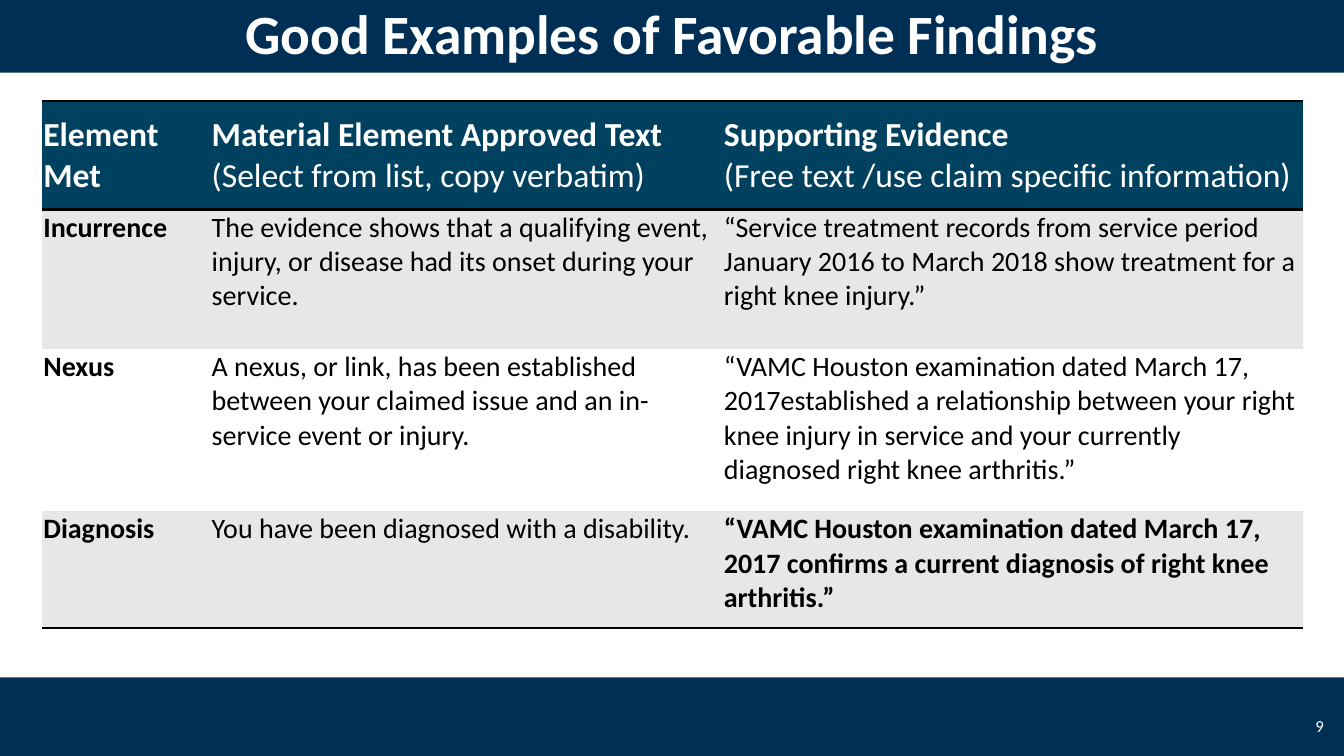
from dataclasses import dataclass

from lxml import etree
from pptx import Presentation
from pptx.dml.color import RGBColor
from pptx.enum.shapes import MSO_SHAPE
from pptx.enum.text import MSO_ANCHOR, PP_ALIGN
from pptx.oxml.ns import qn
from pptx.util import Inches, Pt

RECTANGLE = MSO_SHAPE.RECTANGLE
MIDDLE, TOP = MSO_ANCHOR.MIDDLE, MSO_ANCHOR.TOP
LEFT, CENTER, RIGHT = PP_ALIGN.LEFT, PP_ALIGN.CENTER, PP_ALIGN.RIGHT
NO_TABLE_STYLE = "{2D5ABB26-0587-4C30-8999-92F81FD0307C}"


@dataclass(frozen=True)
class Theme:
    font: str = "Calibri"
    band: str = "002F56"
    header: str = "00415F"
    stripe: str = "E7E7E7"
    light: str = "FFFFFF"
    dark: str = "000000"
    title_size: float = 39.6
    header_size: float = 24
    body_size: float = 20
    number_size: float = 12
    rule_width: float = 2


THEME = Theme()
SLIDE_WIDTH, SLIDE_HEIGHT = 13.33, 7.5
TITLE_BAND = (0, -0.08, SLIDE_WIDTH, 0.8)
FOOTER_BAND = (0, 6.72, SLIDE_WIDTH, 0.8)
NUMBER_BOX = (12.67, 7, 0.56, 0.4)
TABLE_BOX = (0.42, 1, 12.5, 5.23)
COLUMN_WIDTHS = (1.67, 5.08, 5.75)
ROW_HEIGHTS = (1.08, 1.38, 1.61, 1.16)

# Each cell is a list of (text, bold) paragraphs.
FINDINGS = [
    [
        [("Element Met", True)],
        [("Material Element Approved Text", True),
         ("(Select from list, copy verbatim)", False)],
        [("Supporting Evidence", True),
         ("(Free text /use claim specific information)", False)],
    ],
    [
        [("Incurrence", True)],
        [("The evidence shows that a qualifying event, injury, or disease "
          "had its onset during your service.", False)],
        [("“Service treatment records from service period January 2016 to "
          "March 2018 show treatment for a right knee injury.”", False)],
    ],
    [
        [("Nexus", True)],
        [("A nexus, or link, has been established between your claimed issue "
          "and an in-service event or injury.", False)],
        [("“VAMC Houston examination dated March 17, 2017established a "
          "relationship between your right knee injury in service and your "
          "currently diagnosed right knee arthritis.”", False)],
    ],
    [
        [("Diagnosis", True)],
        [("You have been diagnosed with a disability.", False)],
        [("“VAMC Houston examination dated March 17, 2017 confirms a current "
          "diagnosis of right knee arthritis.”", True)],
    ],
]


def to_emu(box):
    return [Inches(length) for length in box]


def write_paragraphs(frame, paragraphs, size, color, align=LEFT):
    for index, (text, bold) in enumerate(paragraphs):
        para = frame.add_paragraph() if index else frame.paragraphs[0]
        para.alignment = align
        span = para.add_run()
        span.text = text
        span.font.name = THEME.font
        span.font.size = Pt(size)
        span.font.bold = bold
        span.font.color.rgb = RGBColor.from_string(color)


def add_band(page, box):
    band = page.shapes.add_shape(RECTANGLE, *to_emu(box))
    band.shadow.inherit = False
    band.fill.solid()
    band.fill.fore_color.rgb = RGBColor.from_string(THEME.band)
    band.line.fill.background()


def add_label(page, box, text, size, align, bold=False):
    frame = page.shapes.add_textbox(*to_emu(box)).text_frame
    frame.word_wrap = True
    frame.vertical_anchor = MIDDLE
    write_paragraphs(frame, [(text, bold)], size, THEME.light, align)


def add_rule(cell, edge):
    """Draw a dark border on one edge of a cell: lnT or lnB."""
    line = etree.SubElement(cell._tc.get_or_add_tcPr(), qn(f"a:{edge}"),
                            w=str(Pt(THEME.rule_width)))
    fill = etree.SubElement(line, qn("a:solidFill"))
    etree.SubElement(fill, qn("a:srgbClr"), val=THEME.dark)


def style_cell(cell, row):
    """Set borders before the fill, as the cell schema orders them."""
    is_header = row == 0
    cell.margin_left = cell.margin_right = cell.margin_top = Inches(0.01)
    cell.margin_bottom = 0
    cell.vertical_anchor = MIDDLE if is_header else TOP
    if is_header:
        add_rule(cell, "lnT")
    if row in (0, len(FINDINGS) - 1):
        add_rule(cell, "lnB")
    body_fill = THEME.stripe if row % 2 else THEME.light
    cell.fill.solid()
    cell.fill.fore_color.rgb = RGBColor.from_string(
        THEME.header if is_header else body_fill)


def add_findings_table(page, box):
    table = page.shapes.add_table(
        len(ROW_HEIGHTS), len(COLUMN_WIDTHS), *to_emu(box)).table
    table.first_row = table.horz_banding = False
    table._tbl.tblPr.find(qn("a:tableStyleId")).text = NO_TABLE_STYLE
    for column, width in zip(table.columns, COLUMN_WIDTHS):
        column.width = Inches(width)
    for row, height in enumerate(ROW_HEIGHTS):
        table.rows[row].height = Inches(height)
        size = THEME.body_size if row else THEME.header_size
        color = THEME.dark if row else THEME.light
        for column, paragraphs in enumerate(FINDINGS[row]):
            cell = table.cell(row, column)
            style_cell(cell, row)
            write_paragraphs(cell.text_frame, paragraphs, size, color)


def build_findings_page(deck):
    page = deck.slides.add_slide(deck.slide_layouts[6])
    add_band(page, FOOTER_BAND)
    add_band(page, TITLE_BAND)
    add_findings_table(page, TABLE_BOX)
    add_label(page, NUMBER_BOX, "9", THEME.number_size, RIGHT)
    add_label(page, TITLE_BAND, "Good Examples of Favorable Findings",
              THEME.title_size, CENTER, bold=True)


def main():
    deck = Presentation()
    deck.slide_width = Inches(SLIDE_WIDTH)
    deck.slide_height = Inches(SLIDE_HEIGHT)
    build_findings_page(deck)
    deck.save("out.pptx")


if __name__ == "__main__":
    main()
